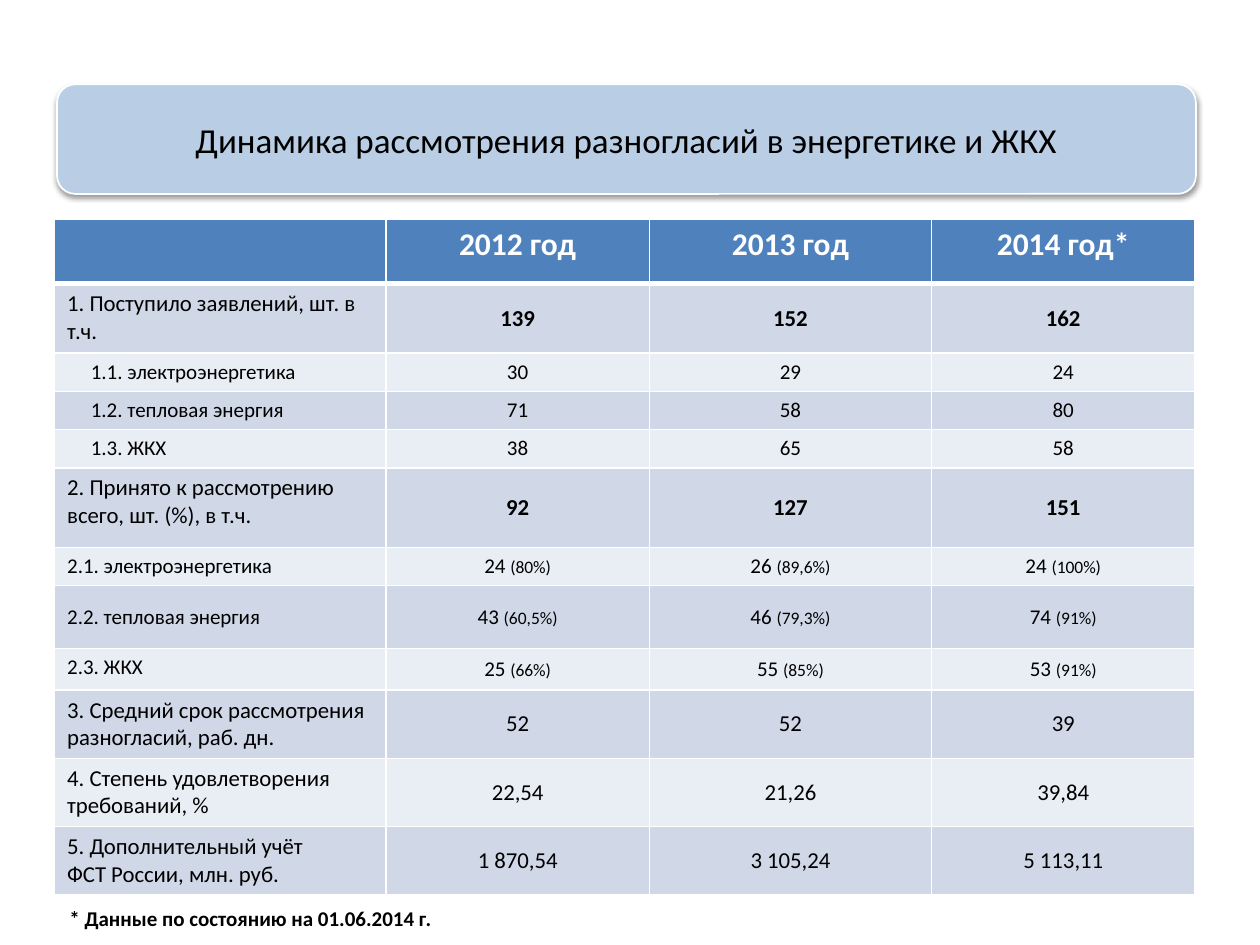
from dataclasses import dataclass
from typing import Any

from lxml.etree import SubElement
from pptx import Presentation
from pptx.dml.color import RGBColor
from pptx.enum.shapes import MSO_SHAPE as Shape
from pptx.enum.text import MSO_ANCHOR as Anchor, MSO_AUTO_SIZE as AutoSize, PP_ALIGN as Align
from pptx.oxml.ns import qn
from pptx.util import Cm, Pt

COLUMNS = [6.68, 5.31, 5.69, 5.31]
HEADINGS = ["", "2012 год", "2013 год", "2014 год*"]
ROWS = [
    (1.4, "total", "1. Поступило заявлений, шт. в т.ч.", "139", "152", "162"),
    (0.76, "indented", "1.1. электроэнергетика", "30", "29", "24"),
    (0.76, "indented", "1.2. тепловая энергия", "71", "58", "80"),
    (0.74, "indented", "1.3. ЖКХ", "38", "65", "58"),
    (1.6, "total", "2. Принято к рассмотрению всего, шт. (%), в т.ч.", "92", "127", "151"),
    (0.76, "detail", "2.1. электроэнергетика", "24 (80%)", "26 (89,6%)", "24 (100%)"),
    (1.27, "middle", "2.2. тепловая энергия", "43 (60,5%)", "46 (79,3%)", "74 (91%)"),
    (0.84, "detail", "2.3. ЖКХ", "25 (66%)", "55 (85%)", "53 (91%)"),
    (1.3, "plain", "3. Средний срок рассмотрения разногласий, раб. дн.", "52", "52", "39"),
    (1.3, "plain", "4. Степень удовлетворения требований, %", "22,54", "21,26", "39,84"),
    (1.14, "plain", "5. Дополнительный учёт\vФСТ России, млн. руб.",
     "1 870,54", "3 105,24", "5 113,11"),
]


def paint(target, color):
    target.solid()
    target.fore_color.rgb = RGBColor.from_string(color)


@dataclass
class Painter:
    """Holds the style and the current slide and draws each kind of element."""

    page: Any
    font: str = "Calibri"
    ink: str = "000000"
    paper: str = "FFFFFF"
    head: str = "4F81BD"
    bands: tuple = ("D0D8E8", "E9EDF4")
    panel: str = "B9CDE5"

    def set_text(self, frame, text, size, color=None, bold=False, align=Align.LEFT):
        para = frame.paragraphs[0]
        para.alignment = align
        para.font.name = self.font
        para.font.size = Pt(size)
        para.font.bold = bold
        paint(para.font.fill, color or self.ink)
        para.text = text
        return para

    def banner(self, left, top, width, height, text):
        box = self.page.shapes.add_shape(
            Shape.ROUNDED_RECTANGLE, Cm(left), Cm(top), Cm(width), Cm(height))
        paint(box.fill, self.panel)
        paint(box.line.fill, self.paper)
        box.line.width = Pt(1)
        box.shadow.inherit = False
        effects = box._element.spPr.find(qn("a:effectLst"))
        shadow = SubElement(effects, qn("a:outerShdw"), blurRad=str(Pt(3.1)),
                            dist=str(Pt(1.6)), dir="5400000", rotWithShape="0")
        shade = SubElement(shadow, qn("a:srgbClr"), val=self.ink)
        SubElement(shade, qn("a:alpha"), val="38000")
        box.text_frame.word_wrap = True
        box.text_frame.vertical_anchor = Anchor.MIDDLE
        self.set_text(box.text_frame, text, 20, align=Align.CENTER)

    def note(self, left, top, width, height, text):
        box = self.page.shapes.add_textbox(Cm(left), Cm(top), Cm(width), Cm(height))
        box.text_frame.word_wrap = False
        box.text_frame.auto_size = AutoSize.SHAPE_TO_FIT_TEXT
        self.set_text(box.text_frame, text, 12, bold=True)

    def frame_cell(self, cell, color, bottom=1):
        properties = cell._tc.get_or_add_tcPr()
        for side, width in zip("LRTB", (1, 1, 1, bottom)):
            line = SubElement(properties, qn(f"a:ln{side}"), w=str(Pt(width)))
            fill = SubElement(line, qn("a:solidFill"))
            SubElement(fill, qn("a:srgbClr"), val=self.paper)
        paint(cell.fill, color)

    def value(self, cell, text, size, bold):
        cell.vertical_anchor = Anchor.MIDDLE
        number, bracket, share = text.partition("(")
        para = self.set_text(cell.text_frame, number, size, bold=bold, align=Align.CENTER)
        if bracket:
            span = para.add_run()
            span.text = bracket + share
            span.font.size = Pt(10)

    def table(self, left, top, columns, header_height, headings, rows):
        heights = [header_height] + [row[0] for row in rows]
        grid = self.page.shapes.add_table(
            len(heights), len(columns), Cm(left), Cm(top),
            Cm(sum(columns)), Cm(sum(heights))).table
        grid.first_row = grid.horz_banding = False
        for column, width in zip(grid.columns, columns):
            column.width = Cm(width)
        for row, height in zip(grid.rows, heights):
            row.height = Cm(height)
        for cell, text in zip(grid.rows[0].cells, headings):
            self.frame_cell(cell, self.head, bottom=3)
            self.set_text(cell.text_frame, text, 18, self.paper, True, Align.CENTER)
        for index, (_, kind, label, *values) in enumerate(rows):
            first, *others = grid.rows[index + 1].cells
            size = 13 if kind in ("total", "plain") else 12
            for cell in (first, *others):
                self.frame_cell(cell, self.bands[index % 2])
            self.set_text(first.text_frame, label, size)
            if kind == "indented":
                first.margin_left = Cm(0.73)
            if kind == "middle":
                first.vertical_anchor = Anchor.MIDDLE
            for cell, text in zip(others, values):
                self.value(cell, text, size, kind == "total")


def main():
    deck = Presentation()
    deck.slide_width, deck.slide_height = Cm(25.4), Cm(19.05)
    painter = Painter(deck.slides.add_slide(deck.slide_layouts[6]))
    painter.table(1.1, 4.42, COLUMNS, 1.3, HEADINGS, ROWS)
    painter.banner(1.15, 1.7, 22.96, 2.21, "Динамика рассмотрения разногласий в энергетике и ЖКХ")
    painter.note(1.15, 18.14, 7.9, 0.76, "* Данные по состоянию на 01.06.2014 г.")
    deck.save("out.pptx")


if __name__ == "__main__":
    main()
